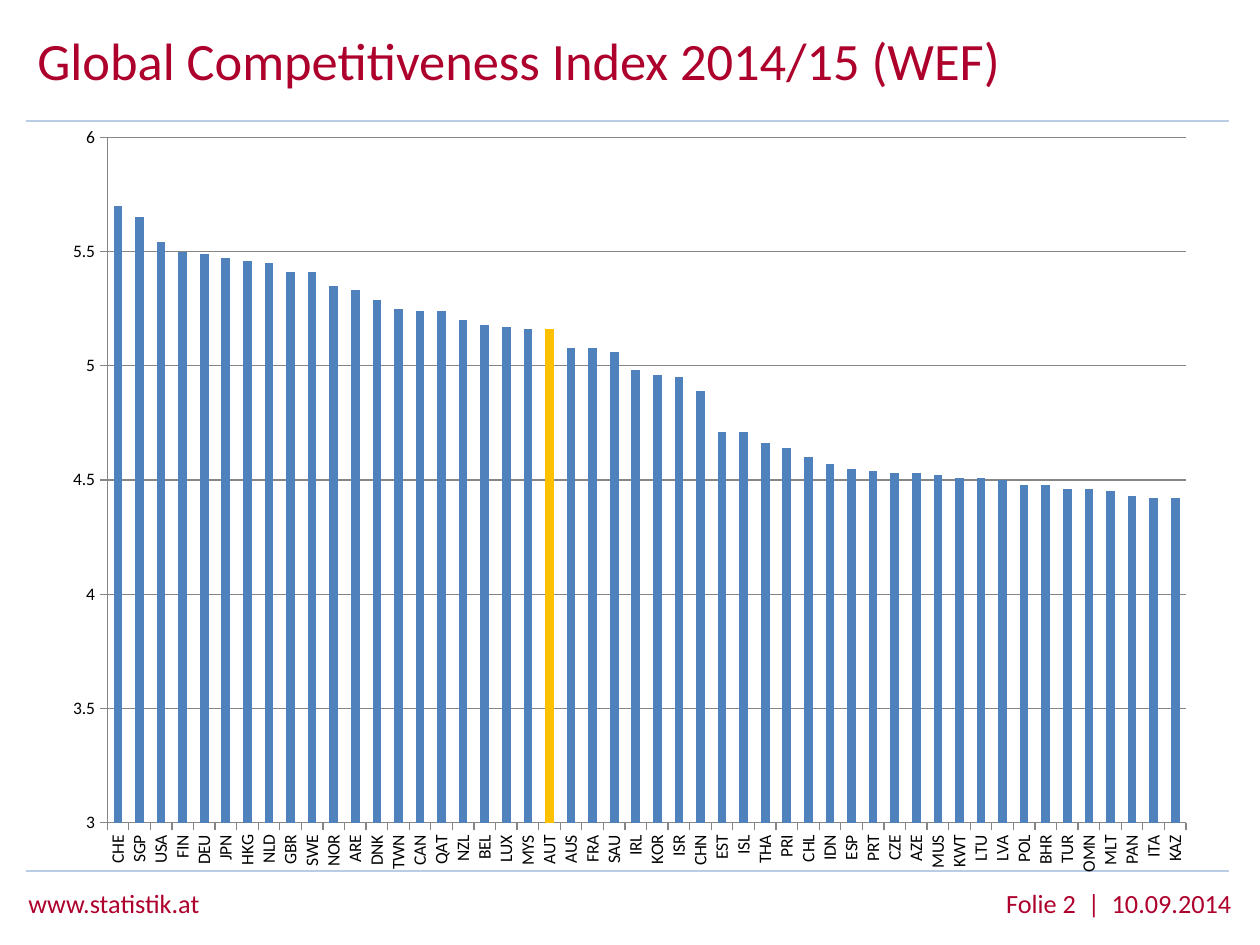
from dataclasses import dataclass

from lxml import etree
from pptx import Presentation
from pptx import util as u
from pptx.chart.data import CategoryChartData
from pptx.dml.color import RGBColor
from pptx.enum import chart as ch, shapes, text
from pptx.oxml.ns import qn

TITLE = "Global Competitiveness Index 2014/15 (WEF)"
WEBSITE = "www.statistik.at"
PAGE_AND_DATE = "Folie 2  |  10.09.2014"
HIGHLIGHT = "AUT"
SCORES = {
    "CHE": 5.7, "SGP": 5.65, "USA": 5.54, "FIN": 5.5, "DEU": 5.49,
    "JPN": 5.47, "HKG": 5.46, "NLD": 5.45, "GBR": 5.41, "SWE": 5.41,
    "NOR": 5.35, "ARE": 5.33, "DNK": 5.29, "TWN": 5.25, "CAN": 5.24,
    "QAT": 5.24, "NZL": 5.2, "BEL": 5.18, "LUX": 5.17, "MYS": 5.16,
    "AUT": 5.16, "AUS": 5.08, "FRA": 5.08, "SAU": 5.06, "IRL": 4.98,
    "KOR": 4.96, "ISR": 4.95, "CHN": 4.89, "EST": 4.71, "ISL": 4.71,
    "THA": 4.66, "PRI": 4.64, "CHL": 4.6, "IDN": 4.57, "ESP": 4.55,
    "PRT": 4.54, "CZE": 4.53, "AZE": 4.53, "MUS": 4.52, "KWT": 4.51,
    "LTU": 4.51, "LVA": 4.5, "POL": 4.48, "BHR": 4.48, "TUR": 4.46,
    "OMN": 4.46, "MLT": 4.45, "PAN": 4.43, "ITA": 4.42, "KAZ": 4.42,
}


@dataclass(frozen=True)
class Theme:
    font: str = "Calibri"
    red: RGBColor = RGBColor(0xAE, 0x00, 0x2C)
    rule: RGBColor = RGBColor(0xB9, 0xCD, 0xE5)
    bar: RGBColor = RGBColor(0x4F, 0x81, 0xBD)
    accent: RGBColor = RGBColor(0xFF, 0xC0, 0x00)
    axis: RGBColor = RGBColor(0x86, 0x86, 0x86)
    ink: RGBColor = RGBColor(0, 0, 0)
    title_size: int = 30
    footer_size: int = 15
    chart_size: int = 10


THEME = Theme()
WIDTH, HEIGHT = 1260, 945
RULE_LEFT, RULE_RIGHT = 26, 1229
RULE_TOPS = (121, 871)
FOOTER_TOP, FOOTER_HEIGHT = 881, 44
PLOT_AREA = {"x": 0.043, "y": 0.09, "w": 0.944, "h": 0.84}


def px(length):
    return u.Emu(round(length * 914400 / 126))


def add_text(page, words, left, top, width, height, size, align=text.PP_ALIGN.LEFT):
    box = page.shapes.add_textbox(*map(px, (left, top, width, height)))
    frame = box.text_frame
    frame.word_wrap = True
    frame.vertical_anchor = text.MSO_ANCHOR.MIDDLE
    para = frame.paragraphs[0]
    para.text = words
    para.alignment = align
    para.font.name = THEME.font
    para.font.size = u.Pt(size)
    para.font.color.rgb = THEME.red
    return para


def add_rule(page, top):
    rule = page.shapes.add_connector(
        shapes.MSO_CONNECTOR.STRAIGHT, px(RULE_LEFT), px(top), px(RULE_RIGHT), px(top))
    rule.line.color.rgb = THEME.rule
    rule.line.width = u.Pt(1.5)
    etree.SubElement(rule.element.spPr, qn("a:effectLst"))


def fix_plot_area(chart):
    """Pin the inner plot area to fixed fractions of the chart."""
    plot_area = chart.element.find(".//" + qn("c:plotArea"))
    layout = plot_area.find(qn("c:layout"))
    if layout is None:
        layout = etree.Element(qn("c:layout"))
        plot_area.insert(0, layout)
    manual = etree.SubElement(layout, qn("c:manualLayout"))
    settings = [("layoutTarget", "inner"), ("xMode", "edge"), ("yMode", "edge")]
    for name, value in settings + list(PLOT_AREA.items()):
        etree.SubElement(manual, qn("c:" + name)).set("val", str(value))


def add_score_chart(page):
    data = CategoryChartData(number_format="General")
    data.categories = list(SCORES)
    data.add_series("Series 1", list(SCORES.values()))
    chart = page.shapes.add_chart(
        ch.XL_CHART_TYPE.COLUMN_CLUSTERED, *map(px, (58, 64, 1143, 816)), data).chart
    chart.has_legend = False
    chart.has_title = False
    chart.font.name = THEME.font
    chart.font.size = u.Pt(THEME.chart_size)
    chart.font.color.rgb = THEME.ink

    plot = chart.plots[0]
    plot.gap_width = 150
    plot.vary_by_categories = False
    bars = plot.series[0]
    highlight = bars.points[list(SCORES).index(HIGHLIGHT)]
    for item, color in ((bars, THEME.bar), (highlight, THEME.accent)):
        item.format.fill.solid()
        item.format.fill.fore_color.rgb = color

    countries, scores = chart.category_axis, chart.value_axis
    scores.minimum_scale, scores.maximum_scale, scores.major_unit = 3, 6, 0.5
    scores.has_major_gridlines = True
    for axis in (countries, scores):
        axis.major_tick_mark = ch.XL_TICK_MARK.OUTSIDE
        axis.tick_labels.font.size = u.Pt(THEME.chart_size)
    for part in (countries, scores, scores.major_gridlines):
        part.format.line.color.rgb = THEME.axis
        part.format.line.width = u.Pt(0.75)
    label_body = countries._element.find(qn("c:txPr")).find(qn("a:bodyPr"))
    label_body.set("rot", "-5400000")
    label_body.set("vert", "horz")
    fix_plot_area(chart)


def main():
    deck = Presentation()
    deck.slide_width, deck.slide_height = px(WIDTH), px(HEIGHT)
    page = deck.slides.add_slide(deck.slide_layouts[6])
    add_text(page, WEBSITE, 16, FOOTER_TOP, 286, FOOTER_HEIGHT, THEME.footer_size)
    add_text(page, PAGE_AND_DATE, 788, FOOTER_TOP, 456, FOOTER_HEIGHT,
             THEME.footer_size, text.PP_ALIGN.RIGHT)
    for top in RULE_TOPS:
        add_rule(page, top)
    title = add_text(page, TITLE, 25, 6, 998, 118, THEME.title_size)
    title.line_spacing = u.Pt(THEME.title_size)
    add_score_chart(page)
    deck.save("out.pptx")


if __name__ == "__main__":
    main()
